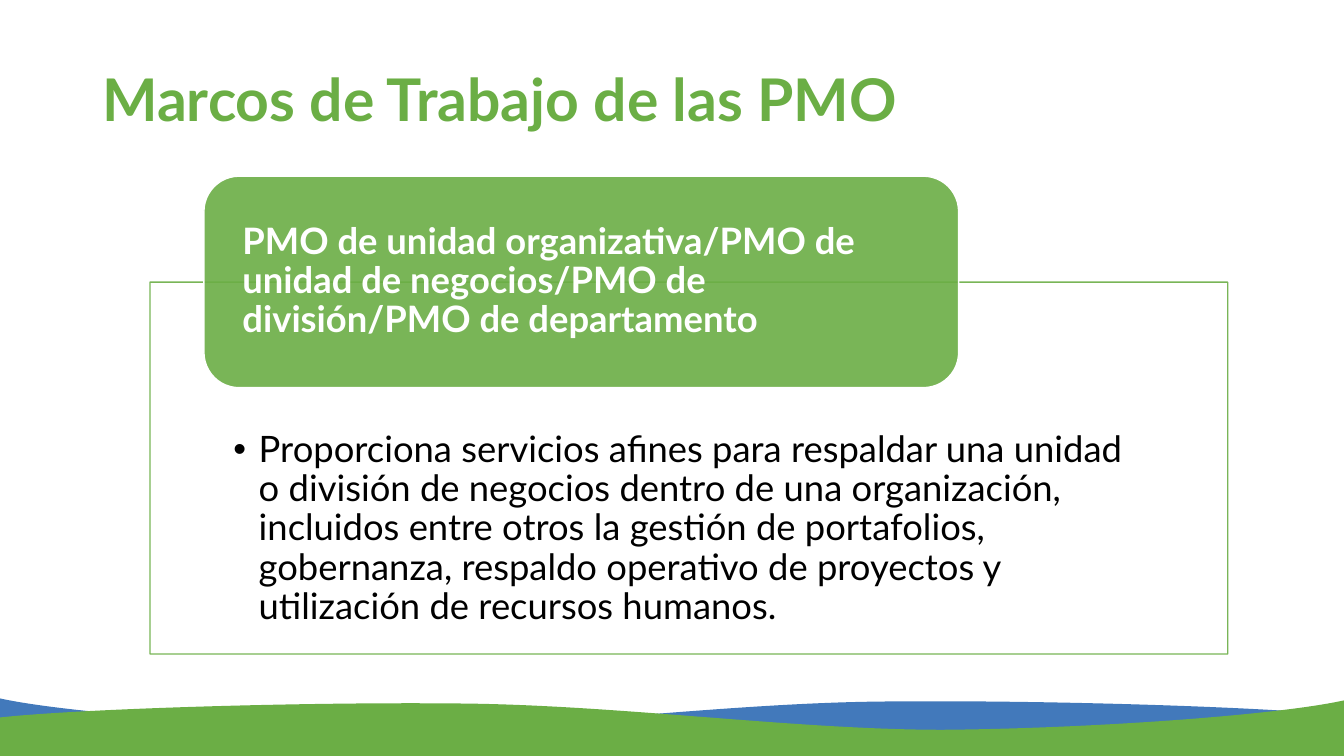
from dataclasses import dataclass

from lxml import etree
from pptx import Presentation
from pptx import util as u
from pptx.dml.color import RGBColor
from pptx.enum import shapes, text
from pptx.oxml.ns import qn
from pptx.util import Cm, Pt

GREEN = RGBColor(0x6B, 0xAE, 0x45)
BLUE = RGBColor(0x42, 0x79, 0xBB)
WHITE = RGBColor(0xFF, 0xFF, 0xFF)
BLACK = RGBColor(0, 0, 0)
FONT = "Lato"
WIDTH, HEIGHT = 33.87, 19.05

# Wave crest from right to left, in cm: a start, then three points per Bézier curve.
CREST = [
    (33.87, 18.03),
    (31.9, 17.81), (26.06, 17.63), (22.1, 17.68),
    (18.16, 17.73), (13.79, 18.34), (10.11, 18.34),
    (6.43, 18.31), (1.73, 17.98), (0, 17.6),
]


@dataclass(frozen=True)
class Wave:
    color: RGBColor
    mirrored: bool
    drop: float


@dataclass(frozen=True)
class TextStyle:
    size: float
    color: RGBColor
    bold: bool
    anchor: text.MSO_ANCHOR
    margins: tuple[float, float, float, float]


WAVES = [Wave(BLUE, False, 0), Wave(GREEN, True, 0.05)]
TITLE = TextStyle(42, GREEN, True, text.MSO_ANCHOR.MIDDLE, (0.25, 0.13, 0.25, 0.13))
HEADING = TextStyle(26, WHITE, True, text.MSO_ANCHOR.MIDDLE, (0.71, 0, 0.71, 0))
DETAIL = TextStyle(26, BLACK, False, text.MSO_ANCHOR.TOP, (2.1, 3.75, 2.1, 0.5))


def curve_crest(sp) -> None:
    """Turn each three straight segments along the crest into one Bézier curve."""
    segments = list(sp._element.iter(qn("a:lnTo")))[:len(CREST) - 1]
    for i in range(0, len(segments), 3):
        curve = etree.Element(qn("a:cubicBezTo"))
        segments[i].addprevious(curve)
        for segment in segments[i:i + 3]:
            curve.append(segment[0])
            segment.getparent().remove(segment)


def draw_wave(s, wave: Wave) -> None:
    outline = [(x, y + wave.drop) for x, y in CREST] + [(0, HEIGHT), (WIDTH, HEIGHT)]
    if wave.mirrored:
        outline = [(WIDTH - x, y) for x, y in outline]
    points = [(Cm(x), Cm(y)) for x, y in outline]
    builder = s.shapes.build_freeform(*points[0])
    builder.add_line_segments(points[1:], close=True)
    sp = builder.convert_to_shape()
    curve_crest(sp)
    sp.shadow.inherit = False
    sp.fill.solid()
    sp.fill.fore_color.rgb = wave.color
    sp.line.fill.background()


def place(sp, left: float, top: float, width: float, height: float) -> None:
    sp.left, sp.top, sp.width, sp.height = map(Cm, (left, top, width, height))


def write(sp, content: str, style: TextStyle):
    """Fill the shape with one left-aligned paragraph and return it."""
    tf = sp.text_frame
    tf.word_wrap = True
    tf.auto_size = text.MSO_AUTO_SIZE.NONE
    tf.vertical_anchor = style.anchor
    tf.margin_left, tf.margin_top, tf.margin_right, tf.margin_bottom = map(Cm, style.margins)
    p = tf.paragraphs[0]
    p.alignment = text.PP_ALIGN.LEFT
    p.line_spacing = 0.9
    p.space_before = Pt(0)
    r = p.add_run()
    r.text = content
    r.font.name = FONT
    r.font.size = Pt(style.size)
    r.font.bold = style.bold
    r.font.color.rgb = style.color
    return p


def set_opacity(fill_parent, percent: int) -> None:
    color = fill_parent.find(f"{qn('a:solidFill')}/{qn('a:srgbClr')}")
    etree.SubElement(color, qn("a:alpha"), val=str(percent * 1000))


def paint(sp, fill: RGBColor, line: RGBColor) -> None:
    """Give the shape a 90 % opaque fill and a thin outline."""
    sp.fill.solid()
    sp.fill.fore_color.rgb = fill
    sp.line.color.rgb = line
    sp.line.width = Pt(1)
    set_opacity(sp._element.spPr, 90)


def add_bullet(p, indent: u.Length) -> None:
    pPr = p._p.get_or_add_pPr()
    pPr.set("marL", str(indent))
    pPr.set("indent", str(-indent))
    etree.SubElement(pPr, qn("a:buFont"), typeface="Arial")
    etree.SubElement(pPr, qn("a:buChar"), char="•")


def main() -> None:
    prs = Presentation()
    prs.slide_width, prs.slide_height = Cm(WIDTH), Cm(HEIGHT)
    s = prs.slides.add_slide(prs.slide_layouts[1])

    for wave in WAVES:
        draw_wave(s, wave)

    title = s.shapes.title
    place(title, 2.33, 0.73, 29.21, 3.68)
    write(title, "Marcos de Trabajo de las PMO", TITLE)

    body = s.placeholders[1]
    place(body, 3.78, 7.11, 27.16, 9.37)
    paint(body, WHITE, GREEN)
    set_opacity(body.line._get_or_add_ln(), 90)
    p = write(
        body,
        "Proporciona servicios afines para respaldar una unidad o división de negocios "
        "dentro de una organización, incluidos entre otros la gestión de portafolios, "
        "gobernanza, respaldo operativo de proyectos y utilización de recursos humanos.",
        DETAIL,
    )
    add_bullet(p, Cm(0.64))

    heading = s.shapes.add_shape(
        shapes.MSO_SHAPE.ROUNDED_RECTANGLE, Cm(5.14), Cm(4.44), Cm(19.02), Cm(5.33))
    heading.shadow.inherit = False
    paint(heading, GREEN, WHITE)
    write(
        heading,
        "PMO de unidad organizativa/PMO de unidad de negocios/PMO de "
        "división/PMO de departamento",
        HEADING,
    )

    prs.save("out.pptx")


if __name__ == "__main__":
    main()
